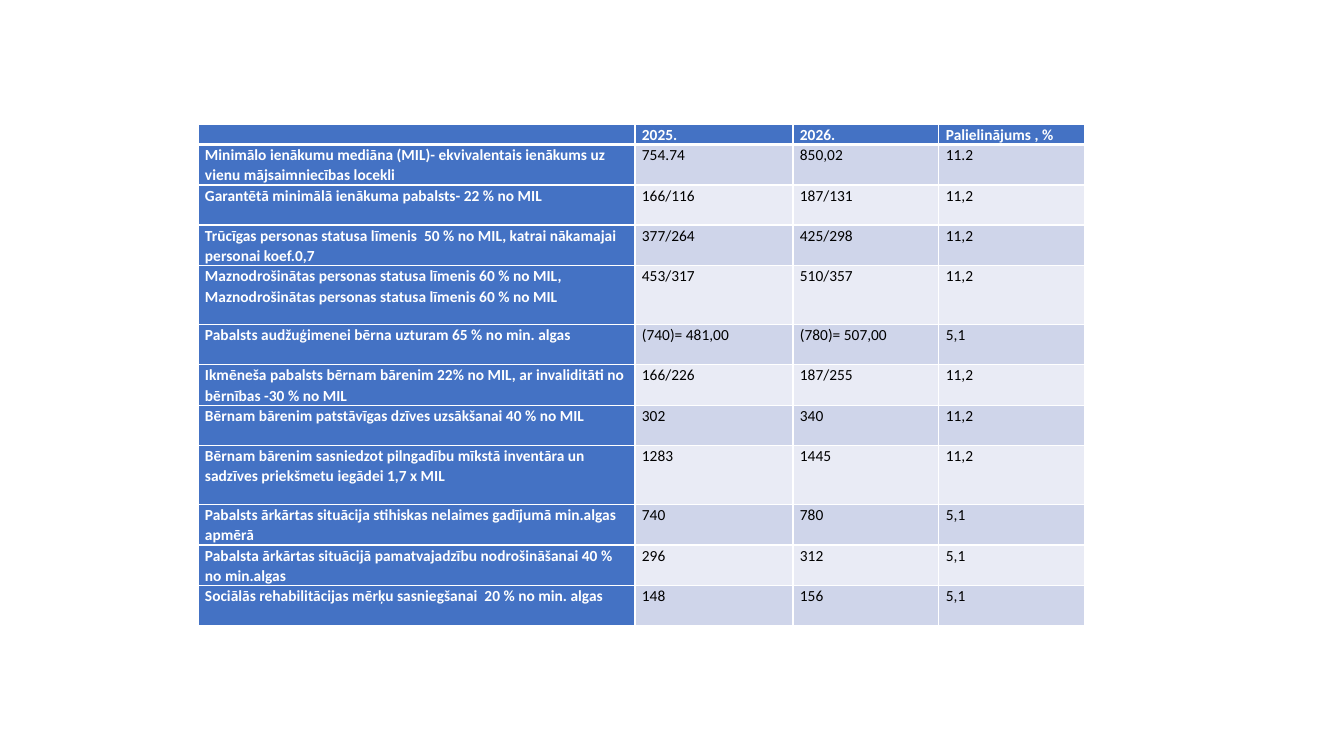
"""Slide with a table of Latvian social benefit levels for 2025 and 2026."""
from lxml.etree import SubElement
from pptx import Presentation
from pptx.dml.color import RGBColor
from pptx.oxml import parse_xml
from pptx.oxml.ns import nsdecls, qn
from pptx.util import Pt

PX = 914400 / 100.8
BLUE = RGBColor(0x44, 0x72, 0xC4)
BAND_DARK = RGBColor(0xCF, 0xD5, 0xEA)
BAND_LIGHT = RGBColor(0xE9, 0xEB, 0xF5)
WHITE = RGBColor(0xFF, 0xFF, 0xFF)
BLACK = RGBColor(0x00, 0x00, 0x00)

COLUMN_WIDTHS = [437, 158, 146, 146]
HEADER_HEIGHT, NORMAL_HEIGHT, TALL_HEIGHT = 20, 40, 59
TALL_ROWS = (4, 8)
BENEFITS = [
    ("", "2025.", "2026.", "Palielinājums , %"),
    ("Minimālo ienākumu mediāna (MIL)- ekvivalentais ienākums uz vienu mājsaimniecības locekli",
     "754.74", "850,02", "11.2"),
    ("Garantētā minimālā ienākuma pabalsts- 22 % no MIL", "166/116", "187/131", "11,2"),
    ("Trūcīgas personas statusa līmenis  50 % no MIL, katrai nākamajai personai koef.0,7",
     "377/264", "425/298", "11,2"),
    ("Maznodrošinātas personas statusa līmenis 60 % no MIL, "
     "Maznodrošinātas personas statusa līmenis 60 % no MIL", "453/317", "510/357", "11,2"),
    ("Pabalsts audžuģimenei bērna uzturam 65 % no min. algas",
     "(740)= 481,00", "(780)= 507,00", "5,1"),
    ("Ikmēneša pabalsts bērnam bārenim 22% no MIL, ar invaliditāti no bērnības -30 % no MIL",
     "166/226", "187/255", "11,2"),
    ("Bērnam bārenim patstāvīgas dzīves uzsākšanai 40 % no MIL", "302", "340", "11,2"),
    ("Bērnam bārenim sasniedzot pilngadību mīkstā inventāra un sadzīves priekšmetu iegādei 1,7 x MIL",
     "1283", "1445", "11,2"),
    ("Pabalsts ārkārtas situācija stihiskas nelaimes gadījumā min.algas apmērā", "740", "780", "5,1"),
    ("Pabalsta ārkārtas situācijā pamatvajadzību nodrošināšanai 40 % no min.algas",
     "296", "312", "5,1"),
    ("Sociālās rehabilitācijas mērķu sasniegšanai  20 % no min. algas", "148", "156", "5,1"),
]


def px(length):
    return round(length * PX)


def add_borders(cell, top, bottom):
    sides = [("lnL", 1), ("lnR", 1), ("lnT", top), ("lnB", bottom)]
    for position, (side, points) in enumerate(sides):
        cell._tc.get_or_add_tcPr().insert(position, parse_xml(
            f'<a:{side} {nsdecls("a")} w="{Pt(points)}"><a:solidFill>'
            f'<a:srgbClr val="{WHITE}"/></a:solidFill></a:{side}>'))


prs = Presentation()
prs.slide_width, prs.slide_height = px(1344), px(756)
slide = prs.slides.add_slide(prs.slide_layouts[6])

heights = [HEADER_HEIGHT] + [TALL_HEIGHT if row in TALL_ROWS else NORMAL_HEIGHT
                             for row in range(1, len(BENEFITS))]
table = slide.shapes.add_table(len(BENEFITS), len(COLUMN_WIDTHS), px(198), px(124),
                               px(sum(COLUMN_WIDTHS)), px(sum(heights))).table
table.first_col = True
for column, width in zip(table.columns, COLUMN_WIDTHS):
    column.width = px(width)

for row, (benefit, height) in enumerate(zip(BENEFITS, heights)):
    table.rows[row].height = px(height)
    for col, text in enumerate(benefit):
        heading = row == 0 or col == 0
        cell = table.cell(row, col)
        cell.margin_left = cell.margin_right = px(7)
        cell.margin_top = cell.margin_bottom = 0
        cell.fill.solid()
        band = BAND_DARK if row % 2 else BAND_LIGHT
        cell.fill.fore_color.rgb = BLUE if heading else band
        add_borders(cell, top=3 if row == 1 else 1, bottom=3 if row == 0 else 1)

        paragraph = cell.text_frame.paragraphs[0]
        paragraph.text = text
        paragraph.line_spacing = 1.07
        paragraph.space_after = Pt(8)
        for run in paragraph.runs:
            run.font.name = "Calibri"
            run.font.size = Pt(11)
            run.font.bold = heading
            run.font.color.rgb = WHITE if heading else BLACK
        if not text:
            SubElement(paragraph._p, qn("a:endParaRPr"), sz="1100")

prs.save("out.pptx")
